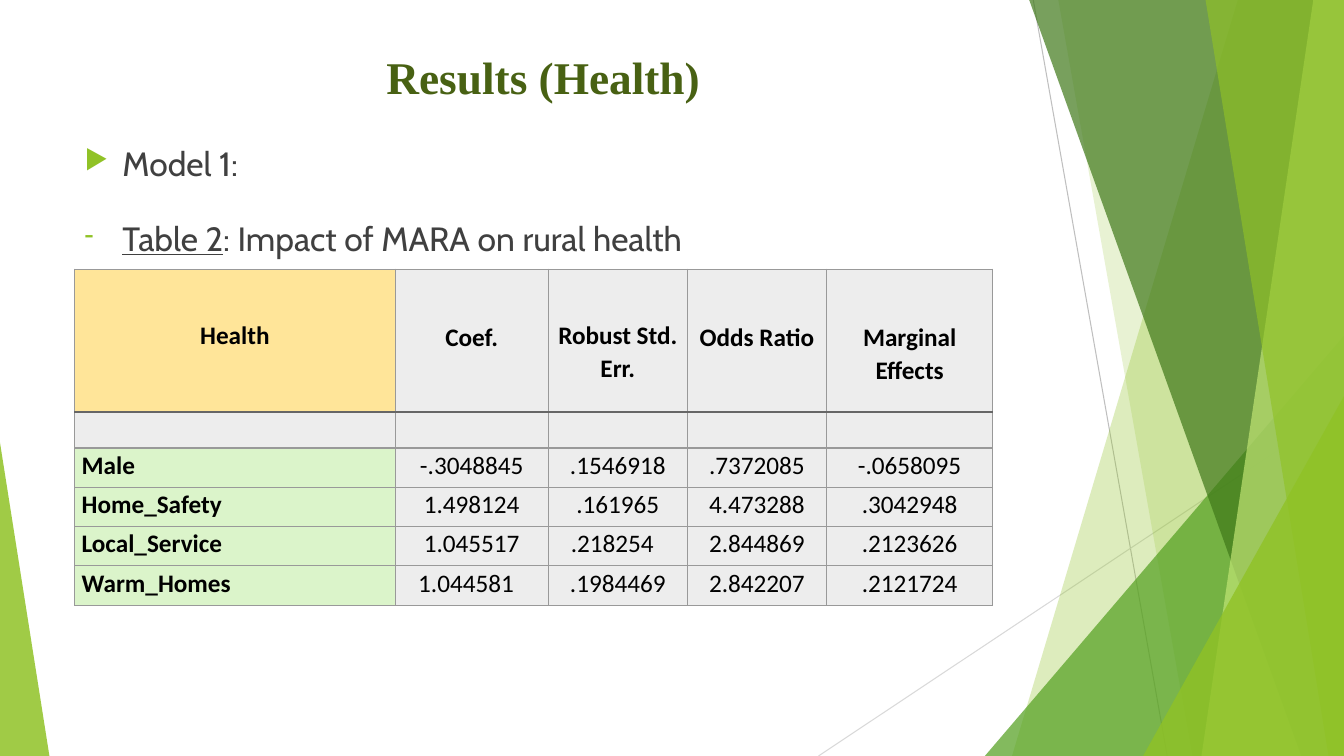
import dataclasses

import pptx
import pptx.dml.color
import pptx.enum.shapes
import pptx.enum.text
import pptx.oxml
import pptx.oxml.ns
import pptx.shapes.autoshape
import pptx.slide
import pptx.table
import pptx.text.text
import pptx.util

WIDTH = pptx.util.Inches(13.333)
HEIGHT = pptx.util.Inches(7.5)
ALIGN = pptx.enum.text.PP_ALIGN
ANCHOR = pptx.enum.text.MSO_ANCHOR
NAMESPACE = pptx.oxml.ns.nsdecls("a")
COLORS = {
    "title": "486113", "body": "404040", "ink": "000000",
    "lime": "90C226", "leaf": "54A021", "forest": "3F7819", "pale": "C0E474",
    "gray line": "BFBFBF", "light line": "D9D9D9",
    "corner": "FFE599", "names": "DBF4CA", "values": "EDEDED",
    "border": "999999", "header rule": "666666",
}


@dataclasses.dataclass
class Ray:
    start: tuple[float, float]
    end: tuple[float, float]
    color: str


@dataclasses.dataclass
class Band:
    """A full-height strip reaching the right edge from a slanted left side."""
    head: float
    foot: float
    color: str
    opacity: int


@dataclasses.dataclass
class Wedge:
    """A right triangle standing on the foot of the slide."""
    left: float
    top: float
    width: float
    apex: int
    color: str
    opacity: int


@dataclasses.dataclass
class Heading:
    text: str
    drop: float


# Places and sizes are percentages of the slide's width and height.
DECORATION = [
    Ray((76.88, 0), (86.85, 100), "gray line"),
    Ray((100, 53.73), (60.9, 100), "light line"),
    Band(92.1, 75.3, "lime", 30),
    Band(78.75, 88.72, "lime", 20),
    Wedge(73.28, 44.4, 26.72, 1, "leaf", 72),
    Band(76.58, 96.82, "forest", 70),
    Band(97.72, 89.4, "pale", 70),
    Band(89.7, 98.85, "lime", 65),
    Wedge(85.05, 52.4, 14.95, 1, "lime", 80),
    Wedge(0, 58.53, 3.68, 0, "lime", 85),
]
COLUMNS = [23.85, 11.4, 10.35, 10.35, 12.38]
ROWS = [18.93, 4.73] + [5.2] * 4
HEADINGS = [
    Heading("Health", 6.5), Heading("Coef.", 6.8), Heading("Robust Std. Err.", 6.5),
    Heading("Odds Ratio", 6.8), Heading("Marginal Effects", 6.8),
]
RESULTS = [
    ["Male", "-.3048845", ".1546918", ".7372085", "-.0658095"],
    ["Home_Safety", "1.498124", ".161965", "4.473288", ".3042948"],
    ["Local_Service", "1.045517", ".218254", "2.844869", ".2123626"],
    ["Warm_Homes", "1.044581", ".1984469", "2.842207", ".2121724"],
]
SHIFTED_LEFT = {"1.044581", ".218254"}


def across(percent: float) -> int:
    return round(WIDTH * percent / 100)


def down(percent: float) -> int:
    return round(HEIGHT * percent / 100)


def rgb(name: str) -> pptx.dml.color.RGBColor:
    return pptx.dml.color.RGBColor.from_string(COLORS[name])


def write(para: pptx.text.text._Paragraph, text: str, *, font: str, size: float,
          color: str, bold: bool = False, underline: bool = False) -> None:
    span = para.add_run()
    span.text = text
    span.font.name = font
    span.font.size = pptx.util.Pt(size)
    span.font.bold = bold
    span.font.underline = underline
    span.font.color.rgb = rgb(color)


def tint(shape: pptx.shapes.autoshape.Shape, color: str, opacity: int) -> None:
    shape.shadow.inherit = False
    shape.fill.solid()
    shape.fill.fore_color.rgb = rgb(color)
    shade = shape.element.find(".//" + pptx.oxml.ns.qn("a:srgbClr"))
    shade.append(pptx.oxml.parse_xml(f'<a:alpha {NAMESPACE} val="{opacity * 1000}"/>'))
    shape.line.fill.background()


def draw_ray(page: pptx.slide.Slide, ray: Ray) -> None:
    line = page.shapes.add_connector(
        pptx.enum.shapes.MSO_CONNECTOR.STRAIGHT,
        across(ray.start[0]), down(ray.start[1]), across(ray.end[0]), down(ray.end[1]))
    line.line.color.rgb = rgb(ray.color)
    line.line.width = pptx.util.Pt(0.75)
    line.element.spPr.append(pptx.oxml.parse_xml(f"<a:effectLst {NAMESPACE}/>"))


def draw_band(page: pptx.slide.Slide, band: Band) -> None:
    outline = page.shapes.build_freeform(across(band.head), 0)
    outline.add_line_segments(
        [(WIDTH, 0), (WIDTH, HEIGHT), (across(band.foot), HEIGHT)], close=True)
    tint(outline.convert_to_shape(), band.color, band.opacity)


def draw_wedge(page: pptx.slide.Slide, wedge: Wedge) -> None:
    shape = page.shapes.add_shape(
        pptx.enum.shapes.MSO_SHAPE.ISOSCELES_TRIANGLE, across(wedge.left),
        down(wedge.top), across(wedge.width), down(100 - wedge.top))
    shape.adjustments[0] = wedge.apex
    tint(shape, wedge.color, wedge.opacity)


def add_title(page: pptx.slide.Slide) -> None:
    title = page.shapes.title
    title.left, title.top = across(28), down(5.33)
    title.width, title.height = across(25.65), down(10.53)
    title.text_frame.vertical_anchor = ANCHOR.MIDDLE
    para = title.text_frame.paragraphs[0]
    para.alignment = ALIGN.LEFT
    para.line_spacing = 0.9
    write(para, "Results (Health)", font="Times New Roman", size=32.4,
          color="title", bold=True)


def set_bullet(para: pptx.text.text._Paragraph, mark: str) -> None:
    properties = para._p.get_or_add_pPr()
    indent = across(2.82)
    properties.set("marL", str(indent))
    properties.set("indent", str(-indent))
    for xml in (f'<a:buClr {NAMESPACE}><a:srgbClr val="{COLORS["lime"]}"/></a:buClr>',
                f'<a:buSzPct {NAMESPACE} val="80000"/>',
                f'<a:buChar {NAMESPACE} char="{mark}"/>'):
        properties.append(pptx.oxml.parse_xml(xml))


def add_body(page: pptx.slide.Slide) -> None:
    box = page.shapes.add_textbox(across(5.55), down(18.27), across(70.5), down(69.73))
    frame = box.text_frame
    frame.word_wrap = True
    look = {"font": "Cabin", "size": 24, "color": "body"}
    model, caption = frame.paragraphs[0], frame.add_paragraph()
    for para, mark in ((model, "▶"), (caption, "-")):
        set_bullet(para, mark)
        para.space_before = pptx.util.Pt(10)
    caption.alignment = ALIGN.JUSTIFY
    caption.line_spacing = 1.5
    write(model, "Model 1:", **look)
    write(caption, "Table 2", underline=True, **look)
    write(caption, ": Impact of MARA on rural health", **look)


def set_border(cell: pptx.table._Cell, side: str, color: str, points: float) -> None:
    """Append one edge; edges go in the order L, R, T, B and before the fill."""
    cell._tc.get_or_add_tcPr().append(pptx.oxml.parse_xml(
        f'<a:ln{side} {NAMESPACE} w="{pptx.util.Pt(points)}"><a:solidFill>'
        f'<a:srgbClr val="{COLORS[color]}"/></a:solidFill></a:ln{side}>'))


def fill_cell(cell: pptx.table._Cell, text: str, row: int, column: int) -> None:
    for side in "LRTB":
        ruled = (row, side) in ((0, "B"), (1, "T"))
        set_border(cell, side, "header rule" if ruled else "border", 1.5 if ruled else 1)
    named = column == 0 and row != 1
    cell.fill.solid()
    cell.fill.fore_color.rgb = rgb(
        "values" if not named else "names" if row else "corner")
    cell.margin_left = across(0.53)
    cell.margin_right = across(1.36 if text in SHIFTED_LEFT else 0.53)
    cell.margin_top = down(HEADINGS[column].drop if row == 0 else 0)
    cell.margin_bottom = 0
    if text:
        para = cell.text_frame.paragraphs[0]
        para.alignment = ALIGN.LEFT if named and row else ALIGN.CENTER
        para.line_spacing = 1.07
        write(para, text, font="Calibri", size=18, color="ink", bold=named or row == 0)


def add_results(page: pptx.slide.Slide) -> None:
    table = page.shapes.add_table(
        len(ROWS), len(COLUMNS), across(5.55), down(35.6),
        across(sum(COLUMNS)), down(sum(ROWS))).table
    table.first_row = table.horz_banding = False
    for column, share in zip(table.columns, COLUMNS):
        column.width = across(share)
    for row, share in zip(table.rows, ROWS):
        row.height = down(share)
    lines = [[heading.text for heading in HEADINGS], [""] * len(COLUMNS), *RESULTS]
    for row, line in enumerate(lines):
        for column, text in enumerate(line):
            fill_cell(table.cell(row, column), text, row, column)


def main() -> None:
    deck = pptx.Presentation()
    deck.slide_width, deck.slide_height = WIDTH, HEIGHT
    page = deck.slides.add_slide(deck.slide_layouts.get_by_name("Title Only"))
    painters = {Ray: draw_ray, Band: draw_band, Wedge: draw_wedge}
    for piece in DECORATION:
        painters[type(piece)](page, piece)
    add_title(page)
    add_body(page)
    add_results(page)
    deck.save("out.pptx")


if __name__ == "__main__":
    main()
